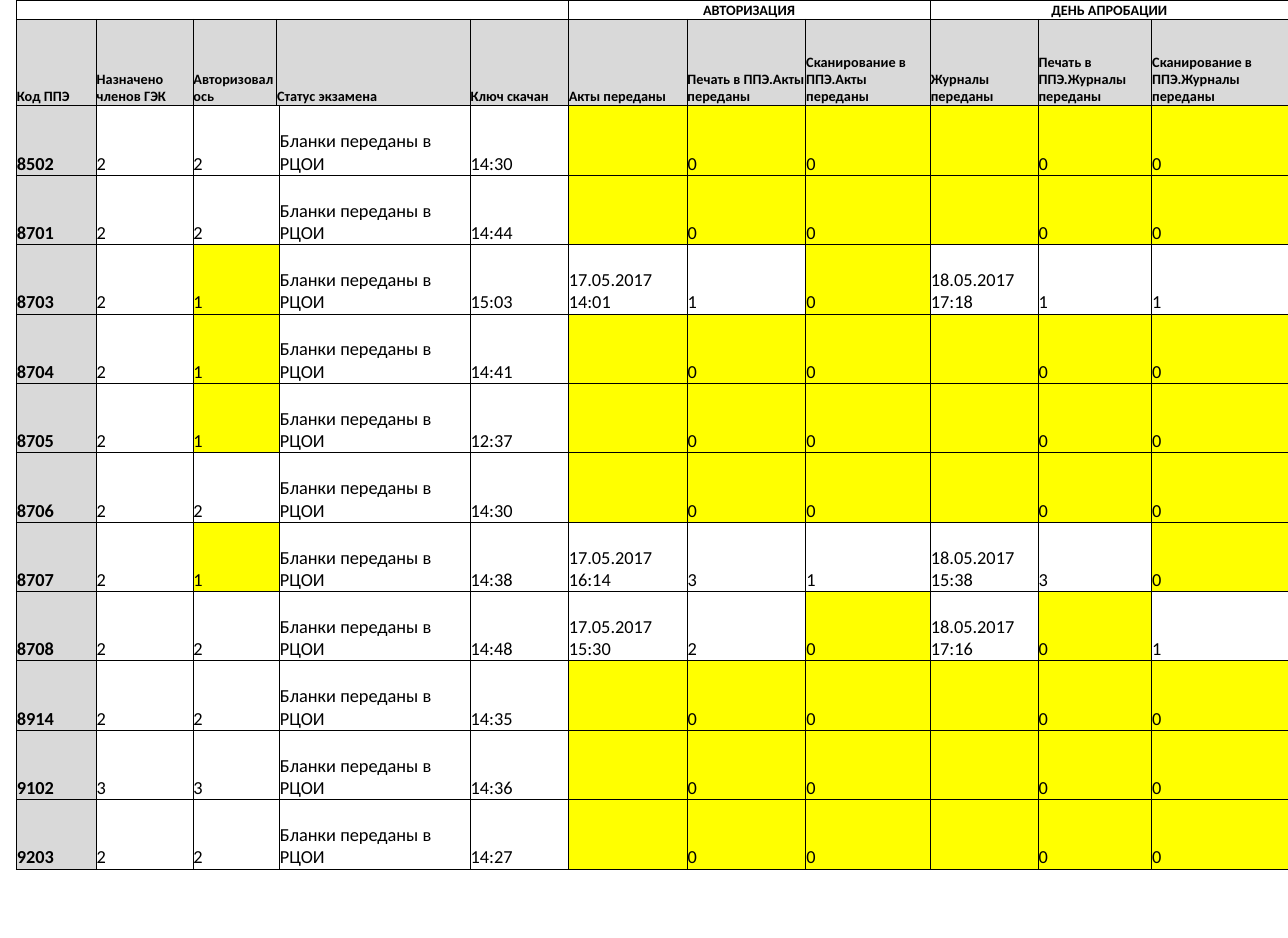
from lxml import etree
from pptx import Presentation, util as u
from pptx.dml.color import RGBColor
from pptx.enum import text
from pptx.oxml.ns import qn

COLORS = {"ink": "000000", "head": "D9D9D9", "alert": "FFFF00"}
FONT = "Calibri"
SLIDE = (17.57, 12.79)
LEFT = 0.22

GROUPS = [("", 5), ("АВТОРИЗАЦИЯ", 3), ("ДЕНЬ АПРОБАЦИИ", 3)]
HEADINGS = [
    "Код ППЭ", "Назначено членов ГЭК", "Авторизовалось", "Статус экзамена", "Ключ скачан",
    "Акты переданы", "Печать в ППЭ.Акты переданы", "Сканирование в ППЭ.Акты переданы",
    "Журналы переданы", "Печать в ППЭ.Журналы переданы", "Сканирование в ППЭ.Журналы переданы",
]
STATUS = "Бланки переданы в РЦОИ"
NOT_SENT = ("", "0", "0")
# code, assigned, authorised, key time, acts (sent, print, scan), journals (sent, print, scan)
POINTS = [
    ("8502", "2", "2", "14:30", NOT_SENT, NOT_SENT),
    ("8701", "2", "2", "14:44", NOT_SENT, NOT_SENT),
    ("8703", "2", "1", "15:03", ("17.05.2017 14:01", "1", "0"), ("18.05.2017 17:18", "1", "1")),
    ("8704", "2", "1", "14:41", NOT_SENT, NOT_SENT),
    ("8705", "2", "1", "12:37", NOT_SENT, NOT_SENT),
    ("8706", "2", "2", "14:30", NOT_SENT, NOT_SENT),
    ("8707", "2", "1", "14:38", ("17.05.2017 16:14", "3", "1"), ("18.05.2017 15:38", "3", "0")),
    ("8708", "2", "2", "14:48", ("17.05.2017 15:30", "2", "0"), ("18.05.2017 17:16", "0", "1")),
    ("8914", "2", "2", "14:35", NOT_SENT, NOT_SENT),
    ("9102", "3", "3", "14:36", NOT_SENT, NOT_SENT),
    ("9203", "2", "2", "14:27", NOT_SENT, NOT_SENT),
]

SIDE_COLUMNS = [1.62, 1.62, 1.7, 1.47, 1.55, 1.87]
HEAD_COLUMNS = [1.09, 1.32, 1.14, 2.64, 1.34] + SIDE_COLUMNS
BODY_COLUMNS = [1.09, 1.32, 1.18, 2.6, 1.34] + SIDE_COLUMNS
HEAD_ROWS = [0.26, 1.18]
BODY_ROWS = [10.41 / len(POINTS)] * len(POINTS)


def add_grid(page, top, columns, rows):
    frame = page.shapes.add_table(len(rows), len(columns), u.Inches(LEFT), u.Inches(top),
                                  u.Inches(sum(columns)), u.Inches(sum(rows)))
    table = frame.table
    table.first_row = table.horz_banding = False
    for column, width in zip(table.columns, columns):
        column.width = u.Inches(width)
    for row, height in zip(table.rows, rows):
        row.height = u.Inches(height)
    return table


def add_borders(cell):
    properties = cell._tc.get_or_add_tcPr()
    for index, side in enumerate(("a:lnL", "a:lnR", "a:lnT", "a:lnB")):
        line = etree.Element(qn(side), w=str(u.Pt(0.5)))
        solid = etree.SubElement(line, qn("a:solidFill"))
        etree.SubElement(solid, qn("a:srgbClr"), val=COLORS["ink"])
        properties.insert(index, line)


def write_cell(cell, words, size=18, bold=False, fill=None, align=text.PP_ALIGN.LEFT):
    cell.margin_left = cell.margin_right = cell.margin_top = u.Inches(0.01)
    cell.margin_bottom = 0
    cell.vertical_anchor = text.MSO_ANCHOR.BOTTOM
    if fill:
        cell.fill.solid()
        cell.fill.fore_color.rgb = RGBColor.from_string(COLORS[fill])
    else:
        cell.fill.background()
    add_borders(cell)
    para = cell.text_frame.paragraphs[0]
    para.alignment = align
    if words:
        span = para.add_run()
        span.text = words
        span.font.name = FONT
        span.font.size = u.Pt(size)
        span.font.bold = bold
        span.font.color.rgb = RGBColor.from_string(COLORS["ink"])
    else:
        # An empty cell keeps the table's text size, so that its row does not grow
        para._p.get_or_add_endParaRPr().set("sz", str(size * 100))


def body_fill(column, value, assigned):
    """Grey for the code, yellow where people or reports are missing."""
    if column == 0:
        return "head"
    short_staffed = column == 2 and int(value) < int(assigned)
    not_reported = column >= 5 and value in NOT_SENT
    return "alert" if short_staffed or not_reported else None


def fill_head(table):
    start = 0
    for title, width in GROUPS:
        for offset in range(width):
            write_cell(table.cell(0, start + offset), "" if offset else title,
                       size=14, bold=True, align=text.PP_ALIGN.CENTER)
        table.cell(0, start).merge(table.cell(0, start + width - 1))
        start += width
    for column, heading in enumerate(HEADINGS):
        write_cell(table.cell(1, column), heading, size=14, bold=True, fill="head")


def fill_body(table):
    for row, (code, assigned, authorised, key, acts, journals) in enumerate(POINTS):
        values = (code, assigned, authorised, STATUS, key, *acts, *journals)
        for column, value in enumerate(values):
            write_cell(table.cell(row, column), value, bold=column == 0,
                       fill=body_fill(column, value, assigned))


def main():
    deck = Presentation()
    deck.slide_width, deck.slide_height = (u.Inches(side) for side in SLIDE)
    page = deck.slides.add_slide(deck.slide_layouts[6])
    fill_head(add_grid(page, 0, HEAD_COLUMNS, HEAD_ROWS))
    fill_body(add_grid(page, sum(HEAD_ROWS), BODY_COLUMNS, BODY_ROWS))
    deck.save("out.pptx")


if __name__ == "__main__":
    main()
